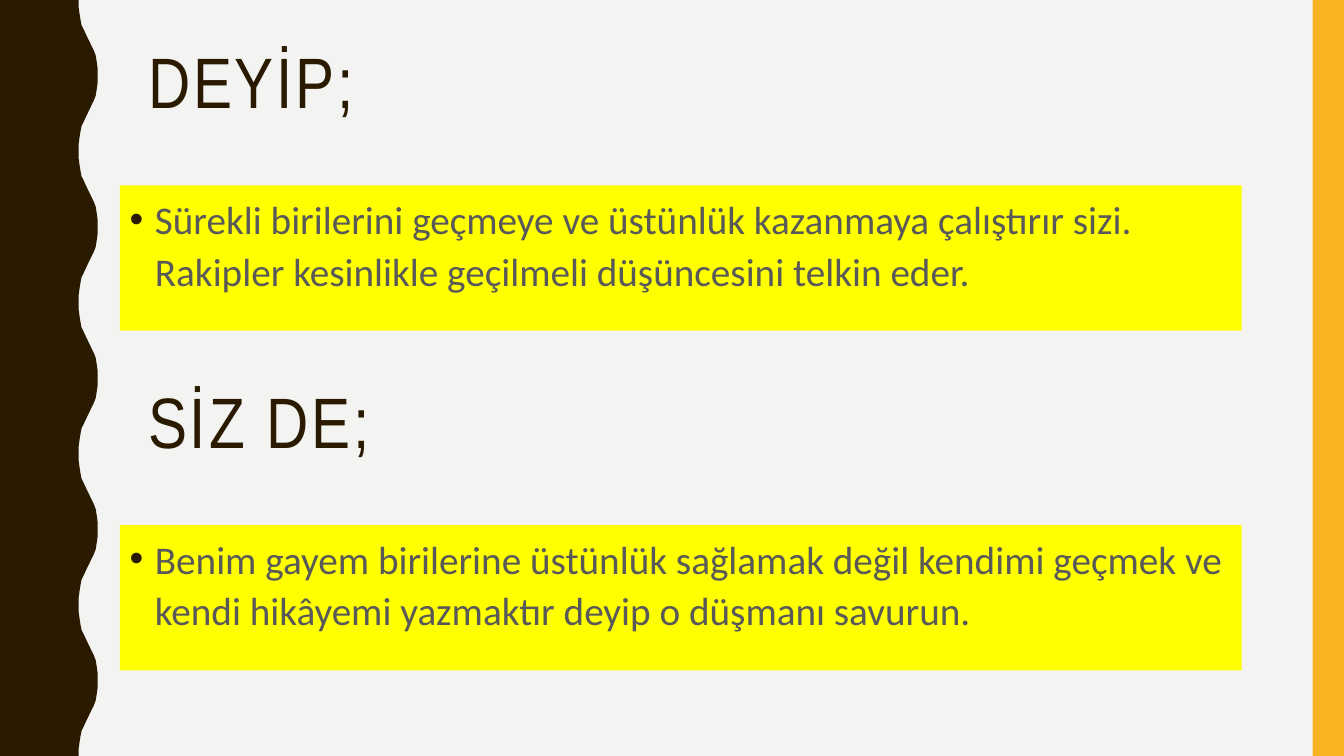
from lxml import etree
from pptx import Presentation
from pptx import util as u
from pptx.dml.color import RGBColor
from pptx.enum import shapes, text
from pptx.oxml.ns import qn

COLORS = {
    "background": "F3F3F2",
    "brown": "2A1A00",
    "amber": "F8B323",
    "yellow": "FFFF00",
    "gray": "595959",
}
WIDTH, HEIGHT = 960, 540
TEXT_WIDTH = 801.4
SECTION_STEP = 242.7
WAVE_PERIOD = 108
# Left-to-right half of one wave, as (x, y) in points
WAVE_RISE = [
    (56.2, 0), (56.2, 5), (56.9, 10), (57.6, 14.4), (58.3, 18),
    (59.8, 21), (61.2, 24), (62.6, 27), (64.1, 30), (65.5, 33),
    (67, 36), (68.4, 39.6), (69.1, 44), (69.8, 49), (69.8, 54),
]
SECTIONS = [
    ("DEYİP;",
     "Sürekli birilerini geçmeye ve üstünlük kazanmaya çalıştırır sizi. "
     "Rakipler kesinlikle geçilmeli düşüncesini telkin eder."),
    ("SİZ DE;",
     "Benim gayem birilerine üstünlük sağlamak değil kendimi geçmek ve "
     "kendi hikâyemi yazmaktır deyip o düşmanı savurun."),
]


class SlideBuilder:
    heading_font, heading_size = "Arial Narrow", 51
    body_font, body_size = "Calibri", 28

    def __init__(self, slide):
        self.slide = slide
        fill = slide.background.fill
        fill.solid()
        fill.fore_color.rgb = self.color("background")

    def color(self, name):
        return RGBColor.from_string(COLORS[name])

    def paint(self, shape, color):
        shape.shadow.inherit = False
        shape.fill.solid()
        shape.fill.fore_color.rgb = self.color(color)
        shape.line.fill.background()

    def rectangle(self, left, top, width, height, color):
        shape = self.slide.shapes.add_shape(
            shapes.MSO_SHAPE.RECTANGLE,
            u.Pt(left), u.Pt(top), u.Pt(width), u.Pt(height))
        self.paint(shape, color)
        return shape

    def wavy_edge(self):
        wave = WAVE_RISE + [(x, WAVE_PERIOD - y) for x, y in WAVE_RISE[-2::-1]]
        points = [(x, y + start) for start in range(0, HEIGHT, WAVE_PERIOD)
                  for x, y in wave]
        points.append((0, HEIGHT))
        builder = self.slide.shapes.build_freeform(0, 0)
        builder.add_line_segments([(u.Pt(x), u.Pt(y)) for x, y in points])
        self.paint(builder.convert_to_shape(), "brown")

    def add_wording(self, shape, wording, font, size, color, line_spacing):
        """Fill the shape with one top-left paragraph; return it and its run."""
        frame = shape.text_frame
        frame.word_wrap = True
        frame.vertical_anchor = text.MSO_ANCHOR.TOP
        paragraph = frame.paragraphs[0]
        paragraph.alignment = text.PP_ALIGN.LEFT
        paragraph.line_spacing = line_spacing
        run = paragraph.add_run()
        run.text = wording
        run.font.name = font
        run.font.size = u.Pt(size)
        run.font.color.rgb = self.color(color)
        return paragraph, run

    def heading(self, wording, top):
        box = self.slide.shapes.add_textbox(
            u.Pt(98.8), u.Pt(top), u.Pt(TEXT_WIDTH), u.Pt(117.4))
        _, run = self.add_wording(box, wording, self.heading_font,
                                  self.heading_size, "brown", 0.9)
        run._r.get_or_add_rPr().set("spc", "200")

    def bullet_panel(self, wording, top):
        panel = self.rectangle(85.6, top, TEXT_WIDTH, 103.7, "yellow")
        paragraph, _ = self.add_wording(panel, wording, self.body_font,
                                        self.body_size, "gray", 1.1)
        paragraph.space_before = u.Pt(7)
        properties = paragraph._p.get_or_add_pPr()
        properties.set("marL", str(u.Pt(18)))
        properties.set("indent", str(u.Pt(-18)))
        bullet_color = etree.SubElement(properties, qn("a:buClr"))
        etree.SubElement(bullet_color, qn("a:srgbClr"), val=COLORS["brown"])
        etree.SubElement(properties, qn("a:buFont"), typeface="Arial")
        etree.SubElement(properties, qn("a:buChar"), char="•")


def main():
    presentation = Presentation()
    presentation.slide_width = u.Pt(WIDTH)
    presentation.slide_height = u.Pt(HEIGHT)
    slide = presentation.slides.add_slide(presentation.slide_layouts[6])
    builder = SlideBuilder(slide)
    builder.wavy_edge()
    builder.rectangle(937.6, 0, 22.4, HEIGHT, "amber")
    for index, (heading, body) in enumerate(SECTIONS):
        offset = index * SECTION_STEP
        builder.heading(heading, 30.2 + offset)
        builder.bullet_panel(body, 132.5 + offset)
    presentation.save("out.pptx")


if __name__ == "__main__":
    main()
